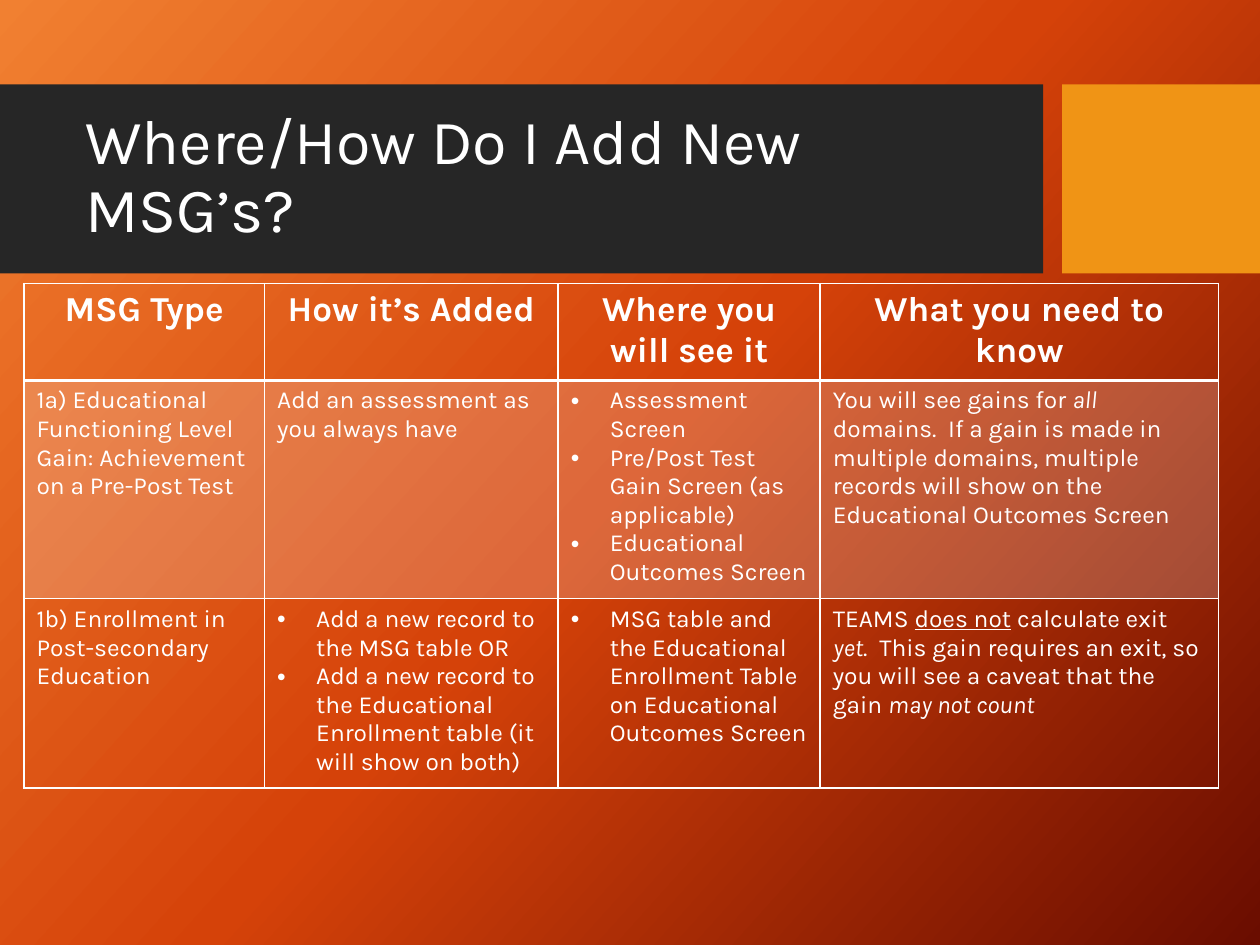
import copy
from dataclasses import dataclass

import lxml.etree
import pptx
import pptx.dml.color
import pptx.enum.shapes
import pptx.enum.text
import pptx.oxml.ns
import pptx.slide
import pptx.table
import pptx.text.text
import pptx.util

Inches = pptx.util.Inches
Pt = pptx.util.Pt
RGB = pptx.dml.color.RGBColor.from_string
qn = pptx.oxml.ns.qn


@dataclass(frozen=True)
class Theme:
    font: str = "Karla"
    text: str = "FFFFFF"
    band: str = "262626"
    accent: str = "F09415"
    gradient: tuple[str, ...] = ("F18031", "D54209", "6A0D00")
    gradient_angle: int = 42
    title_size: int = 36
    header_size: int = 20
    body_size: int = 14
    rule: int = 1
    header_rule: int = 2
    tint_percent: int = 20
    bullet_indent: float = 0.31


@dataclass(frozen=True)
class Run:
    text: str
    italic: bool = False
    underline: bool = False


@dataclass(frozen=True)
class Para:
    runs: tuple[Run, ...]
    bullet: bool = False


@dataclass(frozen=True)
class Block:
    left: float
    width: float
    color: str


THEME = Theme()
BAND_TOP, BAND_HEIGHT = 0.67, 1.5
BLOCKS = (Block(0, 8.28, THEME.band), Block(8.43, 1.57, THEME.accent))
COLUMN_WIDTHS = (1.91, 2.33, 2.08, 3.16)
ROW_HEIGHTS = (0.75, 1.69, 1.46)


def plain(*runs: str | Run) -> list[Para]:
    return [Para(tuple(r if isinstance(r, Run) else Run(r) for r in runs))]


def bullets(*items: str) -> list[Para]:
    return [Para((Run(item),), bullet=True) for item in items]


ROWS = (
    tuple(plain(heading) for heading in (
        "MSG Type", "How it’s Added", "Where you will see it", "What you need to know")),
    (
        plain("1a) Educational Functioning Level Gain: Achievement on a Pre-Post Test"),
        plain("Add an assessment as you always have"),
        bullets("Assessment Screen",
                "Pre/Post Test Gain Screen (as applicable)",
                "Educational Outcomes Screen"),
        plain("You will see gains for ", Run("all", italic=True),
              " domains.  If a gain is made in multiple domains, multiple records "
              "will show on the Educational Outcomes Screen"),
    ),
    (
        plain("1b) Enrollment in Post-secondary Education"),
        bullets("Add a new record to the MSG table OR",
                "Add a new record to the Educational Enrollment table "
                "(it will show on both)"),
        bullets("MSG table and the Educational Enrollment Table on "
                "Educational Outcomes Screen"),
        plain("TEAMS ", Run("does not", underline=True), " calculate exit ",
              Run("yet", italic=True),
              ".  This gain requires an exit, so you will see a caveat that the gain ",
              Run("may not count", italic=True)),
    ),
)


def paint_background(slide: pptx.slide.Slide) -> None:
    fill = slide.background.fill
    fill.gradient()
    fill.gradient_angle = 360 - THEME.gradient_angle
    stop_list = next(slide.element.iter(qn("a:gsLst")))
    stop_list.append(copy.deepcopy(stop_list[-1]))
    for index, (stop, color) in enumerate(zip(fill.gradient_stops, THEME.gradient)):
        stop.position = index / (len(THEME.gradient) - 1)
        stop.color.rgb = RGB(color)


def add_block(slide: pptx.slide.Slide, block: Block) -> None:
    rectangle = slide.shapes.add_shape(
        pptx.enum.shapes.MSO_SHAPE.RECTANGLE, Inches(block.left), Inches(BAND_TOP),
        Inches(block.width), Inches(BAND_HEIGHT))
    rectangle.shadow.inherit = False
    rectangle.fill.solid()
    rectangle.fill.fore_color.rgb = RGB(block.color)
    rectangle.line.fill.background()


def style_font(font: pptx.text.text.Font, size: int, bold: bool = False) -> None:
    font.name = THEME.font
    font.size = Pt(size)
    font.bold = bold
    font.color.rgb = RGB(THEME.text)


def add_title(slide: pptx.slide.Slide, text: str) -> None:
    frame = slide.shapes.add_textbox(
        Inches(0.58), Inches(0.82), Inches(7.54), Inches(1.18)).text_frame
    frame.word_wrap = True
    frame.vertical_anchor = pptx.enum.text.MSO_ANCHOR.MIDDLE
    title = frame.paragraphs[0]
    title.text = text
    title.line_spacing = 0.9
    style_font(title.font, THEME.title_size)


def add_bullet(paragraph: pptx.text.text._Paragraph) -> None:
    properties = paragraph._p.get_or_add_pPr()
    indent = Inches(THEME.bullet_indent)
    properties.set("marL", str(indent))
    properties.set("indent", str(-indent))
    lxml.etree.SubElement(properties, qn("a:buFont"), typeface="Arial")
    lxml.etree.SubElement(properties, qn("a:buChar"), char="•")


def set_borders(cell: pptx.table._Cell, top: int, bottom: int) -> None:
    properties = cell._tc.get_or_add_tcPr()
    sides = {"L": THEME.rule, "R": THEME.rule, "T": top, "B": bottom}
    for side, width in sides.items():
        line = lxml.etree.SubElement(properties, qn(f"a:ln{side}"), w=str(Pt(width)))
        fill = lxml.etree.SubElement(line, qn("a:solidFill"))
        lxml.etree.SubElement(fill, qn("a:srgbClr"), val=THEME.text)


def tint(cell: pptx.table._Cell) -> None:
    """Fill the cell with translucent white."""
    cell.fill.solid()
    cell.fill.fore_color.rgb = RGB(THEME.text)
    color = cell._tc.tcPr.find(f"{qn('a:solidFill')}/{qn('a:srgbClr')}")
    lxml.etree.SubElement(color, qn("a:alpha"), val=str(THEME.tint_percent * 1000))


def write_cell(cell: pptx.table._Cell, content: list[Para], header: bool) -> None:
    frame = cell.text_frame
    for index, item in enumerate(content):
        paragraph = frame.add_paragraph() if index else frame.paragraphs[0]
        if item.bullet:
            add_bullet(paragraph)
        if header:
            paragraph.alignment = pptx.enum.text.PP_ALIGN.CENTER
        style_font(paragraph.font, THEME.header_size if header else THEME.body_size, header)
        for part in item.runs:
            run = paragraph.add_run()
            run.text = part.text
            if part.italic:
                run.font.italic = True
            if part.underline:
                run.font.underline = True


def add_gains_table(slide: pptx.slide.Slide) -> None:
    table = slide.shapes.add_table(
        len(ROWS), len(COLUMN_WIDTHS), Inches(0.19), Inches(2.25),
        Inches(sum(COLUMN_WIDTHS)), Inches(sum(ROW_HEIGHTS))).table
    table.first_row = True
    table.horz_banding = False
    for column, width in zip(table.columns, COLUMN_WIDTHS):
        column.width = Inches(width)
    for row_index, (row, height) in enumerate(zip(table.rows, ROW_HEIGHTS)):
        row.height = Inches(height)
        top = THEME.header_rule if row_index == 1 else THEME.rule
        bottom = THEME.header_rule if row_index == 0 else THEME.rule
        for cell, content in zip(row.cells, ROWS[row_index]):
            write_cell(cell, content, header=row_index == 0)
            set_borders(cell, top, bottom)
            if row_index == 1:
                tint(cell)
            else:
                cell.fill.background()


def main() -> None:
    deck = pptx.Presentation()
    deck.slide_width, deck.slide_height = Inches(10), Inches(7.5)
    slide = deck.slides.add_slide(deck.slide_layouts[6])
    paint_background(slide)
    for block in BLOCKS:
        add_block(slide, block)
    add_title(slide, "Where/How Do I Add New MSG’s?")
    add_gains_table(slide)
    deck.save("out.pptx")


if __name__ == "__main__":
    main()
